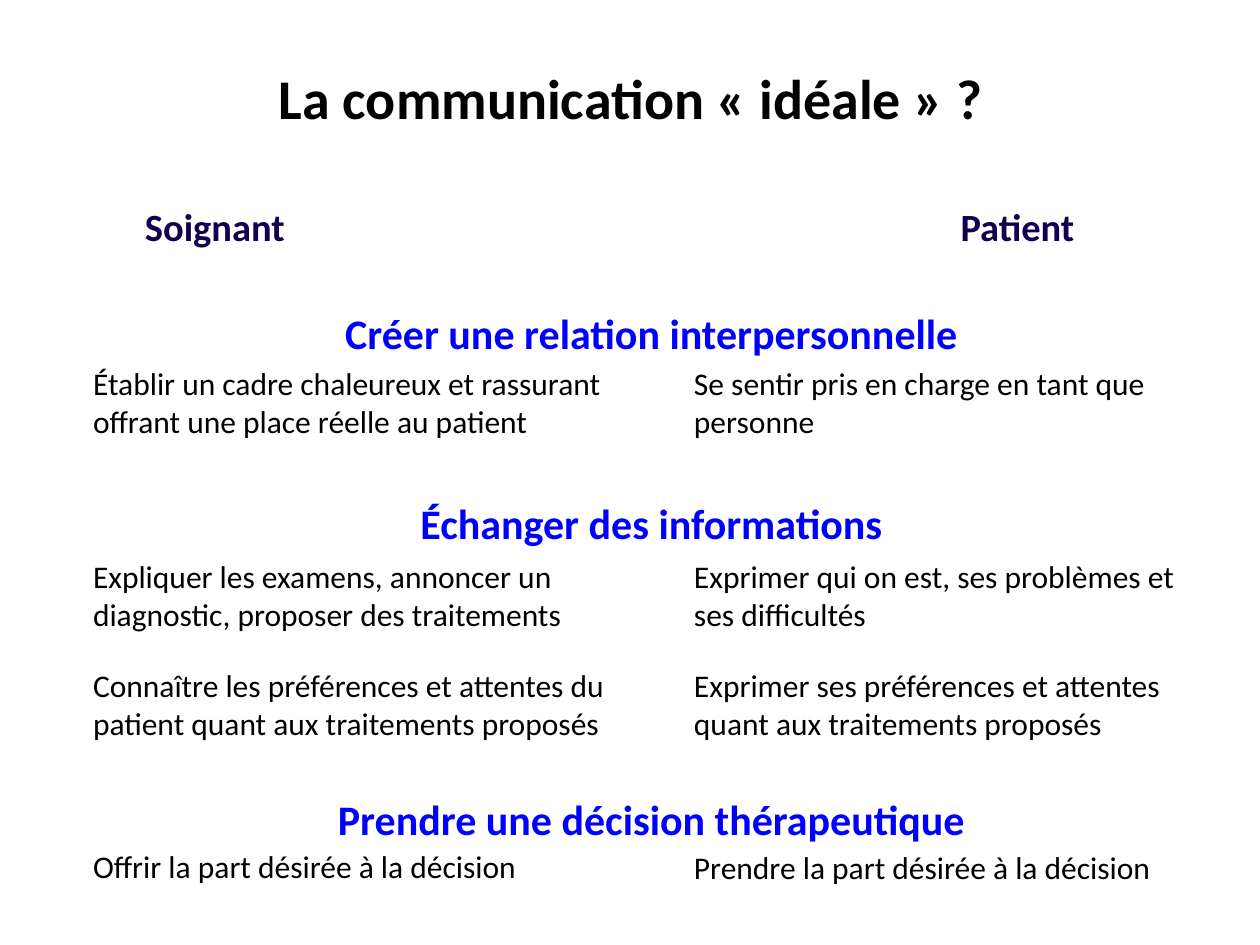
import pptx
import pptx.dml.color
import pptx.enum.shapes
import pptx.enum.text
import pptx.util

Inches = pptx.util.Inches
RGBColor = pptx.dml.color.RGBColor
ALIGN = pptx.enum.text.PP_ALIGN
ANCHOR = pptx.enum.text.MSO_ANCHOR

BLACK = RGBColor(0x00, 0x00, 0x00)
WHITE = RGBColor(0xFF, 0xFF, 0xFF)
BLUE = RGBColor(0x00, 0x00, 0xFF)
NAVY = RGBColor(0x12, 0x00, 0x4F)

FONT = "Calibri"
CAREGIVER_LEFT, PATIENT_LEFT = 0.64, 5.41
COLUMN_WIDTH = 4.3
HEADING_CENTER, HEADING_WIDTH = 5.17, 5.3

ROLES = [("Soignant", 0.74), ("Patient", 7.11)]

# Heading top, heading, then rows of (caregiver top, text, patient top, text, height)
STAGES = [
    (2.39, "Créer une relation interpersonnelle", [
        (2.84, "Établir un cadre chaleureux et rassurant offrant une place réelle au patient",
         2.84, "Se sentir pris en charge en tant que personne", 0.7),
    ]),
    (3.9, "Échanger des informations", [
        (4.37, "Expliquer les examens, annoncer un diagnostic, proposer des traitements",
         4.37, "Exprimer qui on est, ses problèmes et ses difficultés", 0.7),
        (5.24, "Connaître les préférences et attentes du patient quant aux traitements proposés",
         5.24, "Exprimer ses préférences et attentes quant aux traitements proposés", 0.7),
    ]),
    (6.25, "Prendre une décision thérapeutique", [
        (6.67, "Offrir la part désirée à la décision",
         6.68, "Prendre la part désirée à la décision", 0.4),
    ]),
]


def write_text(shape, text, size, color, bold=False, align=ALIGN.LEFT, anchor=ANCHOR.TOP):
    frame = shape.text_frame
    frame.word_wrap = True
    frame.vertical_anchor = anchor
    para = frame.paragraphs[0]
    para.alignment = align
    span = para.add_run()
    span.text = text
    span.font.name = FONT
    span.font.size = pptx.util.Pt(size)
    span.font.bold = bold
    span.font.color.rgb = color


def add_title(page, text):
    title = page.shapes.title
    title.left, title.top = Inches(0.76), Inches(0.36)
    title.width, title.height = Inches(8.5), Inches(0.83)
    write_text(title, text, 32, BLACK, True, ALIGN.CENTER, ANCHOR.MIDDLE)


def add_role(page, text, left):
    box = page.shapes.add_shape(
        pptx.enum.shapes.MSO_SHAPE.RECTANGLE,
        Inches(left), Inches(1.56), Inches(1.93), Inches(0.47))
    box.shadow.inherit = False
    box.fill.solid()
    box.fill.fore_color.rgb = WHITE
    box.line.fill.background()
    write_text(box, text, 22, NAVY, True, ALIGN.CENTER)


def add_heading(page, text, top):
    box = page.shapes.add_textbox(
        Inches(HEADING_CENTER - HEADING_WIDTH / 2), Inches(top),
        Inches(HEADING_WIDTH), Inches(0.5))
    write_text(box, text, 24, BLUE, True, ALIGN.CENTER)


def add_statement(page, text, left, top, height):
    box = page.shapes.add_textbox(
        Inches(left), Inches(top), Inches(COLUMN_WIDTH), Inches(height))
    write_text(box, text, 18, BLACK)


def main():
    deck = pptx.Presentation()
    deck.slide_width, deck.slide_height = Inches(10), Inches(7.5)
    page = deck.slides.add_slide(deck.slide_layouts.get_by_name("Title Only"))

    add_title(page, "La communication « idéale » ?")
    for role, left in ROLES:
        add_role(page, role, left)
    for heading_top, heading, rows in STAGES:
        add_heading(page, heading, heading_top)
        for caregiver_top, caregiver, patient_top, patient, height in rows:
            add_statement(page, caregiver, CAREGIVER_LEFT, caregiver_top, height)
            add_statement(page, patient, PATIENT_LEFT, patient_top, height)

    deck.save("out.pptx")


if __name__ == "__main__":
    main()
